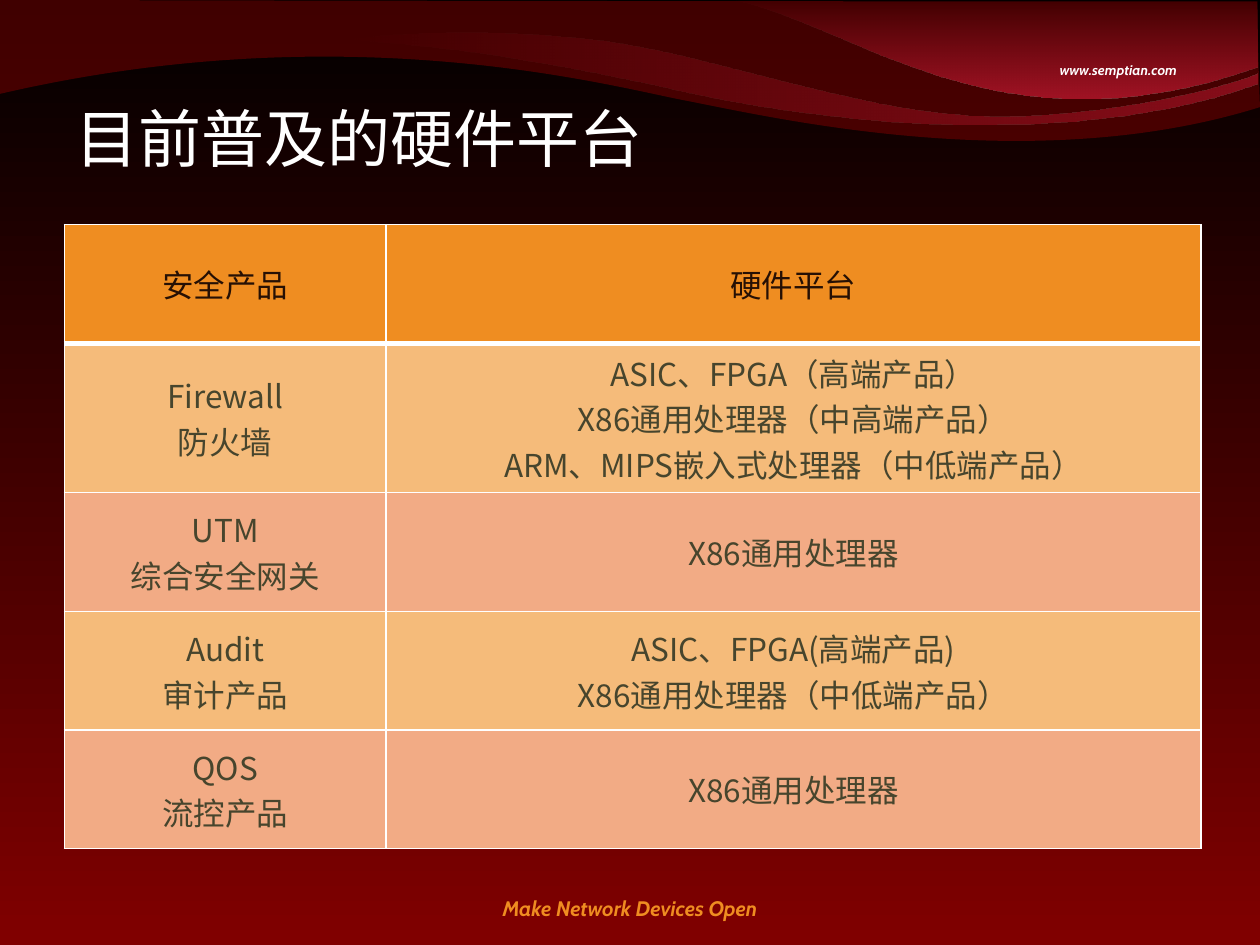
from lxml import etree
from pptx import Presentation
from pptx import util as u
from pptx.dml.color import RGBColor
from pptx.enum import text
from pptx.oxml.ns import qn

TITLE = "目前普及的硬件平台"
HEADER = ("安全产品", "硬件平台")
PRODUCTS = [
    (("Firewall", "防火墙"),
     ("ASIC、FPGA（高端产品）", "X86通用处理器（中高端产品）", "ARM、MIPS嵌入式处理器（中低端产品）")),
    (("UTM", "综合安全网关"), ("X86通用处理器",)),
    (("Audit", "审计产品"), ("ASIC、FPGA(高端产品)", "X86通用处理器（中低端产品）")),
    (("QOS", "流控产品"), ("X86通用处理器",)),
]
SLOGAN = "Make Network Devices Open"
WEBSITE = "www.semptian.com"

CJK = "Noto Sans CJK SC"
THEME = {
    "sky": ("000000", "800000"),
    "bands": ("F5BB7A", "F2AB85"),
    "header": "EF8D21",
    "border": "FFFFFF",
    "title": ("FFFFFF", {"name": "Karla", "size": u.Pt(36)}),
    "head": ("261004", {"name": CJK, "size": u.Pt(18), "bold": False}),
    "body": ("47452D", {"name": CJK, "size": u.Pt(18), "bold": False}),
    "slogan": ("EF8D21", {"name": "Cabin", "size": u.Pt(12), "bold": True, "italic": True}),
    "website": ("FFFFFF", {"name": "Cabin", "size": u.Pt(8), "bold": True, "italic": True}),
}

WAVES = [
    {"start": (-0.03, 1.9),
     "curves": [(6.83, 0.3, 12.09, 1.68, 13.72, 2.01), (15.34, 2.31, 20.7, 3.63, 25.4, 2.16),
                (25.4, 2.16, 25.35, 0.86, 25.35, 0.03), (12.62, 0.03, -0.03, 0, -0.03, 0),
                (-0.03, 0.69, -0.03, 1.24, -0.03, 1.9)],
     "stops": [("800000", 50)], "angle": 0},
    {"start": (9.91, 1.09),
     "curves": [(11.89, 1.42, 12.9, 1.63, 13.74, 1.83), (14.55, 2.01, 20.73, 3.35, 25.35, 1.68),
                (25.35, 1.68, 25.35, 1.73, 25.35, 1.47), (24.41, 1.85, 21.72, 2.44, 19.51, 2.31),
                (17.3, 2.21, 14.17, 1.07, 12.09, 0.81), (9.98, 0.56, 8.1, 0.64, 6.93, 0.79),
                (6.96, 0.81, 8.1, 0.84, 9.91, 1.09)],
     "stops": [("CA1C35", 0), ("CA1C35", 50)], "angle": 0},
    {"start": (25.35, -0.03),
     "curves": [(25.35, 0.66, 25.35, 1.35, 25.35, 1.35), (20.02, 3.23, 17.22, 0.46, 14.66, -0.03),
                (14.66, -0.03, 20.02, -0.03, 25.35, -0.03)],
     "stops": [("CA1C35", 0), ("CA1C35", 70)], "angle": 270},
]
COLUMNS = (6.48, 16.43)
ROWS = (2.39, 2.59, 2.39, 2.39, 2.39)


def set_gradient(fill, colors, angle):
    fill.gradient()
    fill.gradient_angle = angle
    for position, (stop, color) in enumerate(zip(fill.gradient_stops, colors)):
        stop.position = position
        stop.color.rgb = RGBColor.from_string(color)


def write(frame, lines, role, align):
    color, formats = THEME[role]
    for index, line in enumerate(lines):
        para = frame.paragraphs[0] if index == 0 else frame.add_paragraph()
        para.alignment = align
        span = para.add_run()
        span.text = line
        for name, value in formats.items():
            setattr(span.font, name, value)
        span.font.color.rgb = RGBColor.from_string(color)
        etree.SubElement(span.font._element, qn("a:ea"), typeface=CJK)


def bend(shape):
    lines = list(shape._element.iter(qn("a:lnTo")))
    for first in range(0, len(lines) - 2, 3):
        group = lines[first:first + 3]
        curve = etree.Element(qn("a:cubicBezTo"))
        group[0].addprevious(curve)
        for line in group:
            curve.append(line[0])
            line.getparent().remove(line)


def add_wave(page, start, curves, stops, angle):
    builder = page.shapes.build_freeform(u.Cm(start[0]), u.Cm(start[1]))
    points = [(u.Cm(curve[i]), u.Cm(curve[i + 1])) for curve in curves for i in (0, 2, 4)]
    builder.add_line_segments(points, close=True)
    wave = builder.convert_to_shape()
    bend(wave)
    wave.shadow.inherit = False
    wave.line.fill.background()
    if len(stops) == 1:
        wave.fill.solid()
        wave.fill.fore_color.rgb = RGBColor.from_string(stops[0][0])
    else:
        set_gradient(wave.fill, [color for color, opacity in stops], angle)
    tints = wave._element.spPr.iter(qn("a:srgbClr"))
    for tint, (color, opacity) in zip(tints, stops):
        etree.SubElement(tint, qn("a:alpha"), val=str(opacity * 1000))


def add_label(page, place, line, role, align):
    box = page.shapes.add_textbox(*map(u.Cm, place))
    box.text_frame.word_wrap = True
    write(box.text_frame, [line], role, align)


def add_border(cell, side, points):
    edge = etree.SubElement(cell._tc.get_or_add_tcPr(), qn(f"a:ln{side}"), w=str(u.Pt(points)))
    fill = etree.SubElement(edge, qn("a:solidFill"))
    etree.SubElement(fill, qn("a:srgbClr"), val=THEME["border"])


def add_products(page):
    rows = [tuple((name,) for name in HEADER)] + PRODUCTS
    table = page.shapes.add_table(len(rows), len(COLUMNS), u.Cm(1.3), u.Cm(4.53),
                                  u.Cm(sum(COLUMNS)), u.Cm(sum(ROWS))).table
    table.first_row = table.horz_banding = False
    for column, width in zip(table.columns, COLUMNS):
        column.width = u.Cm(width)
    for r, (row, height) in enumerate(zip(rows, ROWS)):
        table.rows[r].height = u.Cm(height)
        for c, lines in enumerate(row):
            cell = table.cell(r, c)
            cell.vertical_anchor = text.MSO_ANCHOR.MIDDLE
            for side in "LRTB":
                add_border(cell, side, 3 if (r, side) == (0, "B") else 1)
            cell.fill.solid()
            color = THEME["bands"][(r - 1) % 2] if r else THEME["header"]
            cell.fill.fore_color.rgb = RGBColor.from_string(color)
            write(cell.text_frame, lines, "body" if r else "head", text.PP_ALIGN.CENTER)


def add_title(page):
    title = page.shapes.title
    place = {"left": 1.27, "top": 1.4, "width": 19.25, "height": 2.74}
    for name, value in place.items():
        setattr(title, name, u.Cm(value))
    frame = title.text_frame
    frame.auto_size = text.MSO_AUTO_SIZE.NONE
    frame.vertical_anchor = text.MSO_ANCHOR.MIDDLE
    write(frame, [TITLE], "title", text.PP_ALIGN.LEFT)
    page.shapes._spTree.append(title._element)


def main():
    deck = Presentation()
    deck.slide_width, deck.slide_height = u.Cm(25.4), u.Cm(19.05)
    page = deck.slides.add_slide(deck.slide_layouts[5])
    set_gradient(page.background.fill, THEME["sky"], 270)
    for wave in WAVES:
        add_wave(page, **wave)
    add_label(page, (0, 17.93, 25.4, 0.76), SLOGAN, "slogan", text.PP_ALIGN.CENTER)
    add_label(page, (21.11, 1.12, 2.9, 0.58), WEBSITE, "website", text.PP_ALIGN.LEFT)
    add_title(page)
    add_products(page)
    deck.save("out.pptx")


if __name__ == "__main__":
    main()
